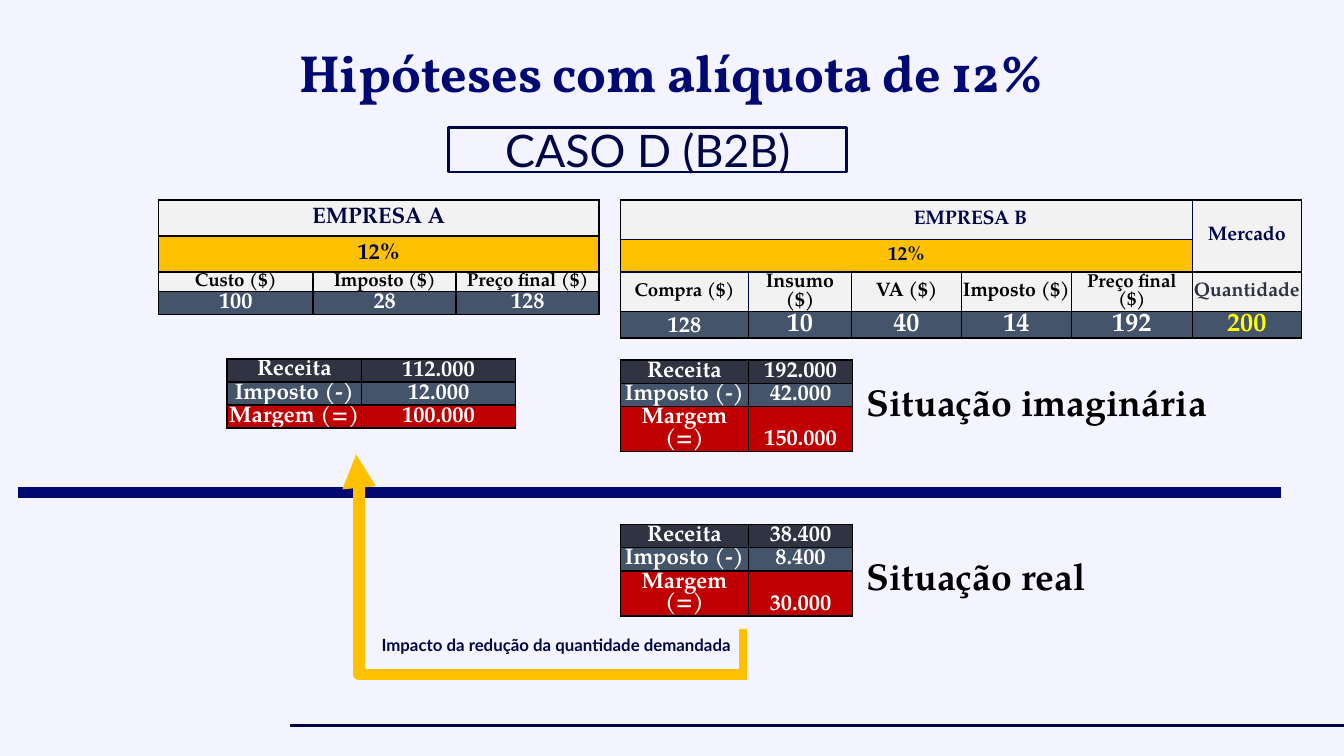
from lxml import etree
from pptx import Presentation
from pptx.dml.color import RGBColor
from pptx.enum.shapes import MSO_CONNECTOR, MSO_SHAPE
from pptx.enum.text import MSO_ANCHOR, PP_ALIGN
from pptx.oxml.ns import qn
from pptx.util import Pt

LINE, ELBOW = MSO_CONNECTOR.STRAIGHT, MSO_CONNECTOR.ELBOW
BOX = MSO_SHAPE.ROUNDED_RECTANGLE
TOP, MID, LOW = MSO_ANCHOR.TOP, MSO_ANCHOR.MIDDLE, MSO_ANCHOR.BOTTOM
LEFT, CENTER = PP_ALIGN.LEFT, PP_ALIGN.CENTER

SERIF, SANS, HEAD = "TeX Gyre Pagella", "Lato", "Vollkorn"
NAVY, BLUE, GOLD = "000546", "000872", "FFC000"
BLACK, WHITE, YELLOW = "000000", "FFFFFF", "FFFF00"
PALE, SLATE, DARK, RED = "F2F2F2", "44546A", "2F3342", "C00000"


def rgb(code):
    return RGBColor.from_string(code)


def write(frame, text, size, ink, face=SERIF, bold=True, align=CENTER):
    frame.text = text
    frame.word_wrap = True
    para = frame.paragraphs[0]
    para.alignment = align
    font = para.font
    font.name, font.size, font.bold = face, Pt(size), bold
    font.color.rgb = rgb(ink)
    return para


def pad(frame, size):
    frame.margin_left = frame.margin_right = Pt(size)
    frame.margin_top = frame.margin_bottom = Pt(size)


def label(slide, spot, text, size, ink, face=SERIF):
    frame = slide.shapes.add_textbox(*map(Pt, spot)).text_frame
    write(frame, text, size, ink, face, align=LEFT)
    return frame


def line(slide, ends, ink, width, kind=LINE):
    link = slide.shapes.add_connector(kind, *map(Pt, ends))
    link.line.color.rgb = rgb(ink)
    link.line.width = Pt(width)
    etree.SubElement(link._element.spPr, qn("a:effectLst"))
    return link


def edge(cell, navy, bare):
    """Draw the four borders; navy and bare list the sides (LRTB) that differ."""
    props = cell._tc.get_or_add_tcPr()
    for place, side in enumerate("LRTB"):
        rule = etree.Element(qn("a:ln" + side), w=str(Pt(1)))
        if side in bare:
            etree.SubElement(rule, qn("a:noFill"))
        else:
            fill = etree.SubElement(rule, qn("a:solidFill"))
            ink = NAVY if side in navy else BLACK
            etree.SubElement(fill, qn("a:srgbClr"), val=ink)
        props.insert(place, rule)


def put(cell, text, fill, size, ink, anchor=MID, wide=False, navy="", bare=""):
    para = write(cell.text_frame, text, size, ink)
    para.line_spacing = Pt(round(size * 0.96, 1))
    cell.vertical_anchor = anchor
    cell.margin_left = cell.margin_right = Pt(7.2 if wide else 0.72)
    cell.margin_top = Pt(3.6 if wide else 0.72)
    cell.margin_bottom = Pt(3.6 if wide else 0)
    cell.fill.solid()
    cell.fill.fore_color.rgb = rgb(fill)
    edge(cell, navy, bare)


def grid(slide, left, top, cols, rows):
    spot = map(Pt, (left, top, sum(cols), sum(rows)))
    table = slide.shapes.add_table(len(rows), len(cols), *spot).table
    table.first_row = table.horz_banding = False
    for col, width in zip(table.columns, cols):
        col.width = Pt(width)
    for row, height in zip(table.rows, rows):
        row.height = Pt(height)
    return table


def firm_a(slide):
    table = grid(slide, 84.8, 107.2, (83, 76.6, 76.6), (19.3, 19.3, 10.2, 12.3))
    for row, (text, fill) in enumerate((("EMPRESA A", PALE), ("12%", GOLD))):
        table.cell(row, 0).merge(table.cell(row, 2))
        for col in range(3):
            put(table.cell(row, col), "" if col else text, fill, 12, NAVY, wide=True)
    data = (("Custo ($)", "100"), ("Imposto ($)", "28"), ("Preço final ($)", "128"))
    for col, (name, value) in enumerate(data):
        put(table.cell(2, col), name, PALE, 10, BLACK)
        put(table.cell(3, col), value, SLATE, 12, WHITE, LOW)


def firm_b(slide):
    table = grid(slide, 332.4, 107.2, (68.6, 55.2, 58.9, 58.9, 64.8, 58.4),
                 (21.2, 17.4, 21.2, 13.9))
    table.cell(0, 1).merge(table.cell(0, 4))
    table.cell(1, 0).merge(table.cell(1, 4))
    table.cell(0, 5).merge(table.cell(1, 5))
    words = {(0, 1): "EMPRESA B", (1, 0): "12%", (0, 5): "Mercado"}
    for row, fill in enumerate((PALE, GOLD)):
        for col in range(6):
            last = col == 5
            bare = {(0, 0): "R", (0, 1): "L"}.get((row, col), "")
            navy = "L" if last else "RB" if row == 0 else "RTB"
            put(table.cell(row, col), words.get((row, col), ""),
                PALE if last else fill, 10.5, NAVY, wide=True, navy=navy, bare=bare)
    data = (
        ("Compra ($)", 10, BLACK, "128", 12, WHITE),
        ("Insumo ($)", 10.5, BLACK, "10", 14, WHITE),
        ("VA ($)", 10.5, BLACK, "40", 14, WHITE),
        ("Imposto ($)", 10.5, BLACK, "14", 14, WHITE),
        ("Preço final ($)", 10, BLACK, "192", 14, WHITE),
        ("Quantidade", 10.5, DARK, "200", 14, YELLOW),
    )
    for col, (name, small, ink, value, big, tone) in enumerate(data):
        navy = {0: "TR", 1: "TL"}.get(col, "")
        put(table.cell(2, col), name, PALE, small, ink, navy=navy)
        put(table.cell(3, col), value, SLATE, big, tone, LOW)


def result(slide, left, top, cols, last, values):
    table = grid(slide, left, top, cols, (12.4, 12.4, last))
    names = ("Receita", "Imposto (-)", "Margem (=)")
    for row, (name, value, fill) in enumerate(zip(names, values, (DARK, SLATE, RED))):
        put(table.cell(row, 0), name, fill, 12, WHITE)
        put(table.cell(row, 1), value, fill, 12, WHITE, LOW)


def head(slide):
    title = slide.shapes.title
    title.left, title.top, title.width, title.height = map(Pt, (57.6, 18, 604.8, 41))
    write(title.text_frame, "Hipóteses com alíquota de 12%", 28, BLUE, HEAD)
    title.text_frame.vertical_anchor = TOP
    box = slide.shapes.add_shape(BOX, *map(Pt, (240.5, 68.4, 213.1, 23.8)))
    box.adjustments[0] = 0
    box.shadow.inherit = False
    box.fill.background()
    box.line.color.rgb = rgb(NAVY)
    box.line.width = Pt(1.5)
    write(box.text_frame, "CASO D (B2B)", 24, NAVY, SANS, bold=False)
    box.text_frame.vertical_anchor = MID
    pad(box.text_frame, 7.2)


def impact(slide):
    """Draw the arrow from the real result back to the first firm."""
    link = line(slide, (190.8, 243.4, 400.3, 361.4), GOLD, 6, ELBOW)
    spec = link._element.spPr
    spec.find(qn("a:xfrm")).set("rot", "10800000")
    shape = spec.find(qn("a:prstGeom"))
    guides = shape.find(qn("a:avLst"))
    if guides is None:
        guides = etree.SubElement(shape, qn("a:avLst"))
    etree.SubElement(guides, qn("a:gd"), name="adj1", fmla="val 99300")
    stroke = spec.find(qn("a:ln"))
    etree.SubElement(stroke, qn("a:round"))
    etree.SubElement(stroke, qn("a:tailEnd"), type="triangle")
    line(slide, (398.2, 361.4, 398.2, 337), GOLD, 4.5)
    frame = label(slide, (197.3, 332.6, 255.6, 25.9),
                  "Impacto da redução da quantidade demandada", 9, NAVY, SANS)
    frame.vertical_anchor = MID
    pad(frame, 7.2)


def main():
    deck = Presentation()
    deck.slide_width, deck.slide_height = Pt(720), Pt(405)
    slide = deck.slides.add_slide(deck.slide_layouts[5])
    back = slide.background.fill
    back.solid()
    back.fore_color.rgb = rgb("F3F4FF")
    line(slide, (155.5, 388.6, 720, 388.6), NAVY, 1.5)
    head(slide)
    firm_a(slide)
    firm_b(slide)
    pair = (68.6, 55.8)
    result(slide, 121.7, 192.2, (72, 82.5), 12.4, ("112.000", "12.000", "100.000"))
    result(slide, 332.4, 193, pair, 24.2, ("192.000", "42.000", "150.000"))
    result(slide, 332.4, 281, pair, 24.2, ("38.400", "8.400", "30.000"))
    for top, text in ((199.4, "Situação imaginária"), (293, "Situação real")):
        label(slide, (457.2, top, 210.2, 31.7), text, 20, BLACK)
    line(slide, (9.4, 264, 686.2, 264), BLUE, 6)
    impact(slide)
    deck.save("out.pptx")


if __name__ == "__main__":
    main()
